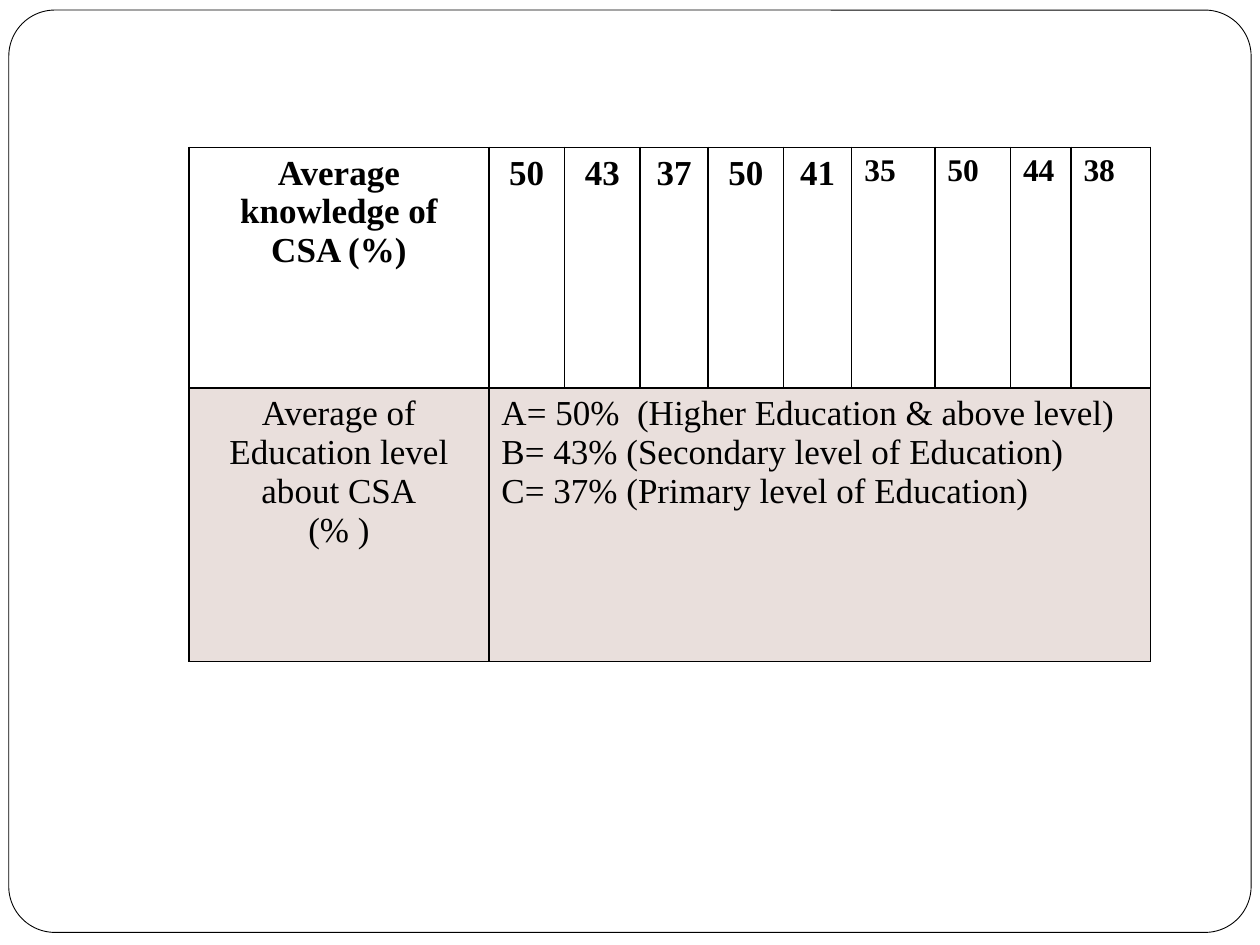
import lxml.etree
import pptx
import pptx.dml.color
import pptx.enum.shapes
import pptx.enum.text
import pptx.oxml.ns
import pptx.util

Inches = pptx.util.Inches
Pt = pptx.util.Pt
qn = pptx.oxml.ns.qn
CENTER = pptx.enum.text.PP_ALIGN.CENTER
LEFT = pptx.enum.text.PP_ALIGN.LEFT

COLORS = {"paper": "FFFFFF", "ink": "000000", "tint": "956251"}
FONT = "Times New Roman"

COLUMN_WIDTHS = [2.38, 0.6, 0.6, 0.54, 0.6, 0.54, 0.66, 0.6, 0.48, 0.63]
ROW_HEIGHTS = [1.91, 2.17]
KNOWLEDGE = ["50", "43", "37", "50", "41", "35", "50", "44", "38"]
CENTERED_VALUES = 5
EDUCATION_LABEL = ["Average of Education level about CSA", "(% )"]
EDUCATION_LEVELS = [
    "A= 50%  (Higher Education & above level)",
    "B= 43% (Secondary level of Education)",
    "C= 37% (Primary level of Education)",
]


def rgb(name):
    return pptx.dml.color.RGBColor.from_string(COLORS[name])


def write(frame, lines, size=20, bold=False, align=LEFT):
    """Put each line in a paragraph of its own."""
    frame.word_wrap = True
    for index, line in enumerate(lines):
        para = frame.paragraphs[0] if index == 0 else frame.add_paragraph()
        para.alignment = align
        span = para.add_run()
        span.text = line
        span.font.name = FONT
        span.font.size = Pt(size)
        span.font.bold = bold
        span.font.color.rgb = rgb("ink")


def set_borders(cell, color="ink", width=1):
    properties = cell._tc.get_or_add_tcPr()
    for side in ("a:lnL", "a:lnR", "a:lnT", "a:lnB"):
        line = lxml.etree.SubElement(properties, qn(side), w=str(Pt(width)))
        fill = lxml.etree.SubElement(line, qn("a:solidFill"))
        lxml.etree.SubElement(fill, qn("a:srgbClr"), val=COLORS[color])


def set_tint(cell, color="tint", opacity=20):
    cell.fill.solid()
    cell.fill.fore_color.rgb = rgb(color)
    value = cell._tc.tcPr.find(qn("a:solidFill")).find(qn("a:srgbClr"))
    lxml.etree.SubElement(value, qn("a:alpha"), val=str(opacity * 1000))


class SlideBuilder:
    def __init__(self, deck):
        self.page = deck.slides.add_slide(deck.slide_layouts[6])
        self.page.background.fill.solid()
        self.page.background.fill.fore_color.rgb = rgb("paper")

    def frame(self, left, top, width, height, rounding):
        box = self.page.shapes.add_shape(
            pptx.enum.shapes.MSO_SHAPE.ROUNDED_RECTANGLE,
            Inches(left), Inches(top), Inches(width), Inches(height))
        box.adjustments[0] = rounding
        box.shadow.inherit = False
        box.fill.solid()
        box.fill.fore_color.rgb = rgb("paper")
        box.line.color.rgb = rgb("ink")
        box.line.width = Pt(0.5)

    def table(self, left, top, widths, heights):
        """Add an unfilled table with a thin border round every cell."""
        table = self.page.shapes.add_table(
            len(heights), len(widths), Inches(left), Inches(top),
            Inches(sum(widths)), Inches(sum(heights))).table
        table.first_row = table.horz_banding = False
        for column, width in zip(table.columns, widths):
            column.width = Inches(width)
        for row, height in zip(table.rows, heights):
            row.height = Inches(height)
        for cell in table.iter_cells():
            set_borders(cell)
            cell.fill.background()
        return table


def main():
    deck = pptx.Presentation()
    deck.slide_width, deck.slide_height = Inches(10), Inches(7.5)
    builder = SlideBuilder(deck)
    builder.frame(0.07, 0.08, 9.86, 7.32, rounding=0.05)
    table = builder.table(1.5, 1.17, COLUMN_WIDTHS, ROW_HEIGHTS)

    write(table.cell(0, 0).text_frame, ["Average knowledge of CSA (%)"],
          bold=True, align=CENTER)
    for column, value in enumerate(KNOWLEDGE, start=1):
        centered = column <= CENTERED_VALUES
        write(table.cell(0, column).text_frame, [value], bold=True,
              size=20 if centered else 18, align=CENTER if centered else LEFT)

    label, levels = table.cell(1, 0), table.cell(1, 1)
    levels.merge(table.cell(1, len(KNOWLEDGE)))
    write(label.text_frame, EDUCATION_LABEL, align=CENTER)
    write(levels.text_frame, EDUCATION_LEVELS)
    for cell in (label, levels):
        set_tint(cell)

    deck.save("out.pptx")


if __name__ == "__main__":
    main()
